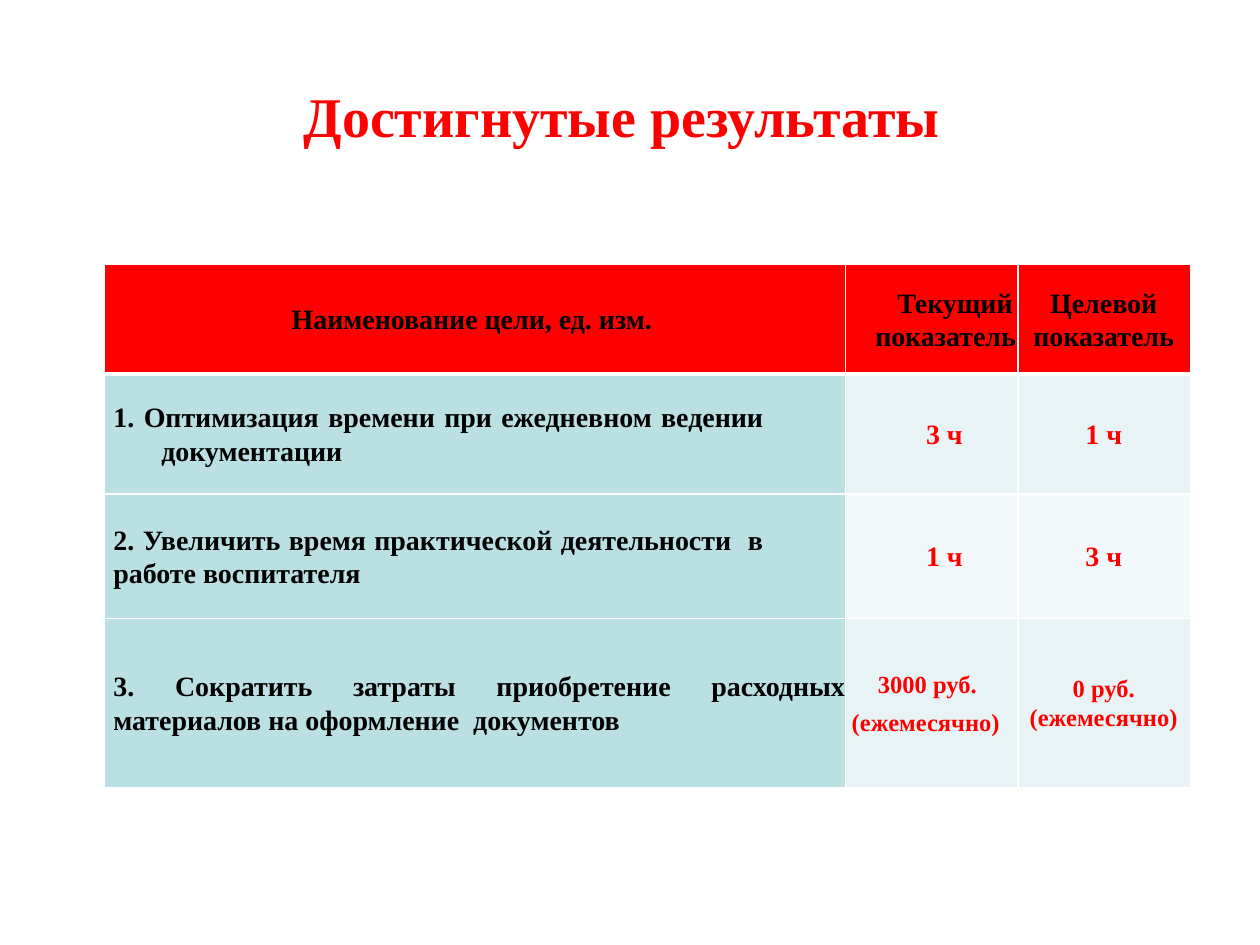
from lxml.etree import SubElement
from pptx import Presentation
from pptx.dml.color import RGBColor as RGB
from pptx.enum.text import MSO_ANCHOR as Anchor, PP_ALIGN as Align
from pptx.oxml.ns import qn
from pptx.util import Inches, Pt

THEME = dict(font="Times New Roman", red="FF0000", black="000000", white="FFFFFF",
             goal="BBE0E3", bands=("E7F3F4", "F3F9FA"),
             title=32, body=16, cost=14)
RED, BLACK = THEME["red"], THEME["black"]

TITLE = "Достигнутые результаты"
HEADERS = ["Наименование цели, ед. изм.", "Текущий показатель", "Целевой показатель"]
# Each row: goal, current value, target value, size of the values
GOALS = [
    ("1. Оптимизация времени при ежедневном ведении документации", "3 ч", "1 ч", THEME["body"]),
    ("2. Увеличить время практической деятельности  в работе воспитателя", "1 ч", "3 ч", THEME["body"]),
    ("3. Сократить затраты приобретение расходных материалов на оформление  документов",
     "3000 руб.\n(ежемесячно)", "0 руб. (ежемесячно)", THEME["cost"]),
]
COLUMN_WIDTHS = [5.88, 1.37, 1.37]
ROW_HEIGHTS = [0.87, 0.95, 0.99, 1.34]
# Left indent and first-line indent of each goal, then its right margin
GOAL_INDENTS = [(0.4, -0.38, 0.65), (0.02, 0, 0.65), (0.02, 0, 0)]


def write(frame, text, *, size=THEME["body"], color=BLACK, align=Align.CENTER,
          left=0, first=0, spacing=1.07, after=0):
    """Fill a text frame, one paragraph per line; after is the gap between them."""
    lines = text.split("\n")
    for number, line in enumerate(lines):
        para = frame.paragraphs[0] if number == 0 else frame.add_paragraph()
        props = para._p.get_or_add_pPr()
        props.set("marL", str(Inches(left)))
        props.set("indent", str(Inches(first)))
        para.alignment = align
        para.line_spacing = spacing
        para.space_after = Pt(after if number < len(lines) - 1 else 0)
        run = para.add_run()
        run.text = line
        run.font.name, run.font.size, run.font.bold = THEME["font"], Pt(size), True
        run.font.color.rgb = RGB.from_string(color)


def style_cell(cell, fill, right=0, bottom_line=1):
    props = cell._tc.get_or_add_tcPr()
    for side, width in (("L", 1), ("R", 1), ("T", 1), ("B", bottom_line)):
        line = SubElement(props, qn(f"a:ln{side}"), w=str(Pt(width)))
        solid = SubElement(line, qn("a:solidFill"))
        SubElement(solid, qn("a:srgbClr"), val=THEME["white"])
    cell.fill.solid()
    cell.fill.fore_color.rgb = RGB.from_string(fill)
    cell.vertical_anchor = Anchor.MIDDLE
    cell.margin_left, cell.margin_right = Inches(0.05), Inches(right)
    cell.margin_top = cell.margin_bottom = 0


def add_title(slide):
    box = slide.shapes.add_textbox(Inches(2.23), Inches(0.6), Inches(5.41), Inches(1.18))
    box.text_frame.word_wrap = True
    write(box.text_frame, TITLE, size=THEME["title"], color=RED, spacing=1)


def add_results(slide):
    table = slide.shapes.add_table(
        len(ROW_HEIGHTS), len(COLUMN_WIDTHS), Inches(0.83), Inches(2.1),
        Inches(sum(COLUMN_WIDTHS)), Inches(sum(ROW_HEIGHTS))).table
    for column, width in zip(table.columns, COLUMN_WIDTHS):
        column.width = Inches(width)
    for row, height in zip(table.rows, ROW_HEIGHTS):
        row.height = Inches(height)

    header_formats = [(0, 0, 0.1), (0.17, 0.15, 0), (0, 0, 0.06)]
    for col, (header, (left, first, right)) in enumerate(zip(HEADERS, header_formats)):
        cell = table.cell(0, col)
        style_cell(cell, RED, right, bottom_line=3)
        write(cell.text_frame, header, left=left, first=first)

    for row, (goal, current, target, size) in enumerate(GOALS, start=1):
        goal_cell, current_cell, target_cell = (table.cell(row, col) for col in range(3))
        left, first, right = GOAL_INDENTS[row - 1]
        band = THEME["bands"][(row - 1) % 2]
        style_cell(goal_cell, THEME["goal"], right)
        write(goal_cell.text_frame, goal, align=Align.JUSTIFY, left=left, first=first)

        two_lines = "\n" in current
        style_cell(current_cell, band, 0.12 if two_lines else 0.06)
        write(current_cell.text_frame, current, size=size, color=RED,
              left=0 if two_lines else 0.21, after=5.2)
        if two_lines:
            current_cell.text_frame.paragraphs[1].alignment = Align.JUSTIFY
        style_cell(target_cell, band, 0.06)
        write(target_cell.text_frame, target, size=size, color=RED)


def main():
    deck = Presentation()
    deck.slide_width, deck.slide_height = Inches(10), Inches(7.5)
    slide = deck.slides.add_slide(deck.slide_layouts[6])
    add_title(slide)
    add_results(slide)
    deck.save("out.pptx")


if __name__ == "__main__":
    main()
